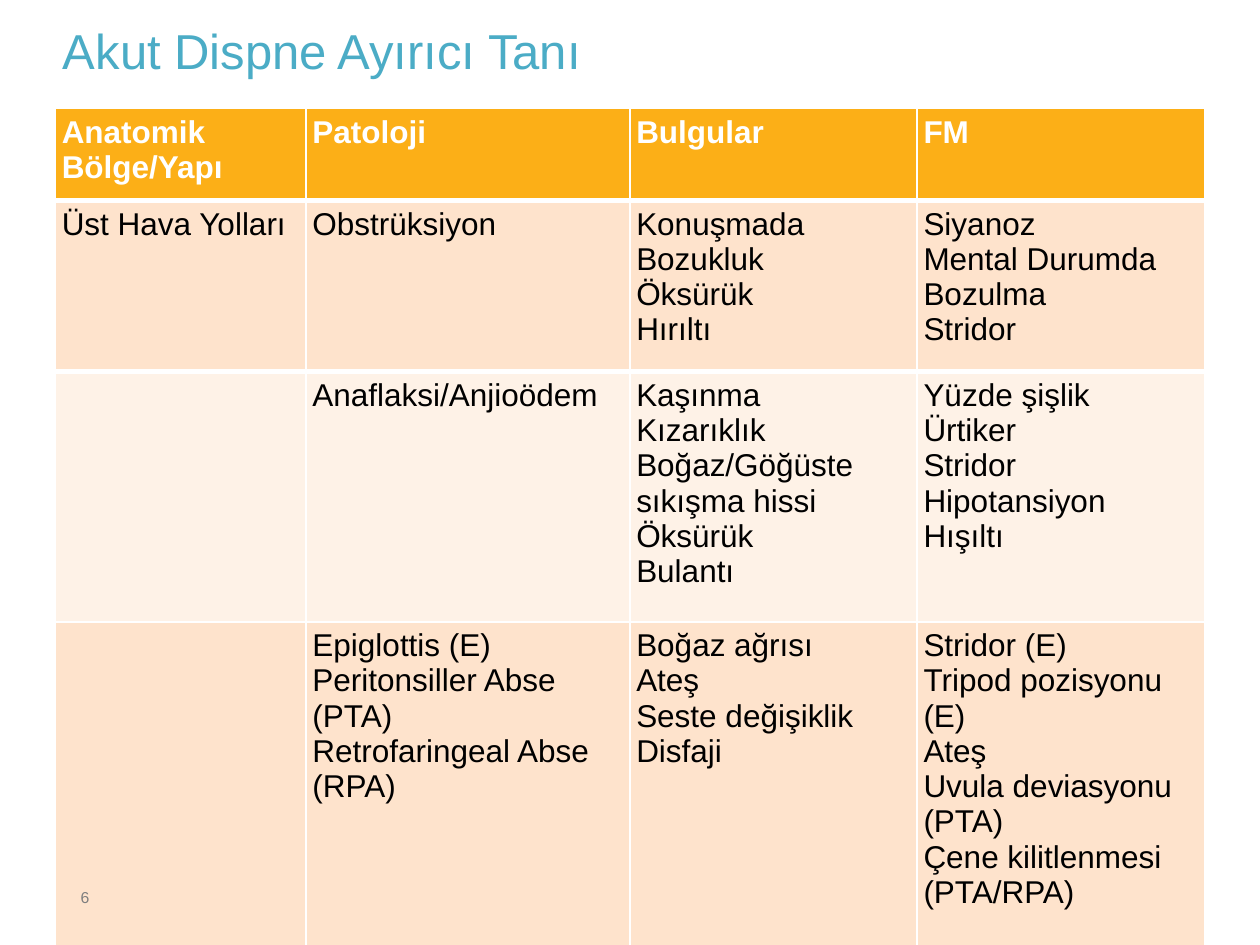
from lxml.etree import SubElement
from pptx import Presentation
from pptx.dml.color import RGBColor as Rgb
from pptx.enum.text import MSO_ANCHOR as Anchor
from pptx.oxml.ns import qn
from pptx.util import Inches, Pt

COLOURS = {
    "title": "4BACC6",
    "header": "FCAF17",
    "band_dark": "FEE3CC",
    "band_light": "FEF2E7",
    "white": "FFFFFF",
    "black": "000000",
    "muted": "7F7F7F",
}
COLUMN_WIDTHS = [0.199, 0.257, 0.228, 0.228]
ROW_HEIGHTS = [0.097, 0.181, 0.265, 0.348]
RULES = [1, 3, 3, 1, 1]
ROWS = [
    [["Anatomik Bölge/Yapı"], ["Patoloji"], ["Bulgular"], ["FM"]],
    [
        ["Üst Hava Yolları"],
        ["Obstrüksiyon"],
        ["Konuşmada Bozukluk\nÖksürük\nHırıltı"],
        ["Siyanoz\nMental Durumda Bozulma\nStridor"],
    ],
    [
        [],
        ["Anaflaksi/Anjioödem"],
        ["Kaşınma\nKızarıklık\nBoğaz/Göğüste sıkışma hissi\nÖksürük\nBulantı"],
        ["Yüzde şişlik\nÜrtiker\nStridor\nHipotansiyon\nHışıltı"],
    ],
    [
        [],
        ["Epiglottis (E)\nPeritonsiller Abse (PTA)\nRetrofaringeal Abse (RPA)"],
        ["Boğaz ağrısı\nAteş\nSeste değişiklik\nDisfaji"],
        [
            "Stridor (E)",
            "Tripod pozisyonu (E)",
            "Ateş",
            "Uvula deviasyonu (PTA)",
            "Çene kilitlenmesi (PTA/RPA)",
        ],
    ],
]


class SlideBuilder:
    font = "Arial"
    inset = Inches(0.05)

    def __init__(self, deck):
        self.width, self.height = deck.slide_width, deck.slide_height
        self.slide = deck.slides.add_slide(deck.slide_layouts[6])

    def place(self, left, top, width, height):
        return (
            int(left * self.width),
            int(top * self.height),
            int(width * self.width),
            int(height * self.height),
        )

    def pad(self, target):
        target.margin_left = target.margin_right = self.inset
        target.margin_top = target.margin_bottom = self.inset
        target.vertical_anchor = Anchor.TOP

    def add_paragraphs(self, frame, paragraphs, size, colour, bold=False, spacing=None):
        for index, text in enumerate(paragraphs):
            para = frame.paragraphs[0] if index == 0 else frame.add_paragraph()
            para.line_spacing = spacing
            for number, line in enumerate(text.split("\n")):
                if number:
                    para.add_line_break()
                span = para.add_run()
                span.text = line
                span.font.name = self.font
                span.font.size = Pt(size)
                span.font.bold = bold
                span.font.color.rgb = Rgb.from_string(COLOURS[colour])

    def text(self, area, text, size, colour, wrap=True, spacing=None):
        box = self.slide.shapes.add_textbox(*self.place(*area))
        frame = box.text_frame
        frame.word_wrap = wrap
        self.pad(frame)
        self.add_paragraphs(frame, [text], size, colour, spacing=spacing)

    def border(self, cell, side, points):
        properties = cell._tc.get_or_add_tcPr()
        line = SubElement(properties, qn(f"a:ln{side}"), w=str(Pt(points)))
        fill = SubElement(line, qn("a:solidFill"))
        SubElement(fill, qn("a:srgbClr"), val=COLOURS["white"])

    def table(self, left, top, widths, heights, rows):
        area = self.place(left, top, sum(widths), sum(heights))
        grid = self.slide.shapes.add_table(len(rows), len(widths), *area).table
        for column, share in zip(grid.columns, widths):
            column.width = int(share * self.width)
        for index, (row, share, entries) in enumerate(zip(grid.rows, heights, rows)):
            row.height = int(share * self.height)
            header = index == 0
            band = "header" if header else "band_dark" if index % 2 else "band_light"
            for cell, entry in zip(row.cells, entries):
                self.pad(cell)
                edges = {"L": 1, "R": 1, "T": RULES[index], "B": RULES[index + 1]}
                for side, points in edges.items():
                    self.border(cell, side, points)
                cell.fill.solid()
                cell.fill.fore_color.rgb = Rgb.from_string(COLOURS[band])
                colour = "white" if header else "black"
                self.add_paragraphs(cell.text_frame, entry, 18, colour, bold=header)


def main():
    deck = Presentation()
    deck.slide_width, deck.slide_height = Inches(10), Inches(7.5)
    page = SlideBuilder(deck)
    page.text((0.045, 0.03, 0.91, 0.12), "Akut Dispne Ayırıcı Tanı", 28, "title", spacing=0.75)
    page.table(0.044, 0.115, COLUMN_WIDTHS, ROW_HEIGHTS, ROWS)
    page.text((0.059, 0.933, 0.018, 0.03), "6", 9, "muted", wrap=False)
    deck.save("out.pptx")


if __name__ == "__main__":
    main()
